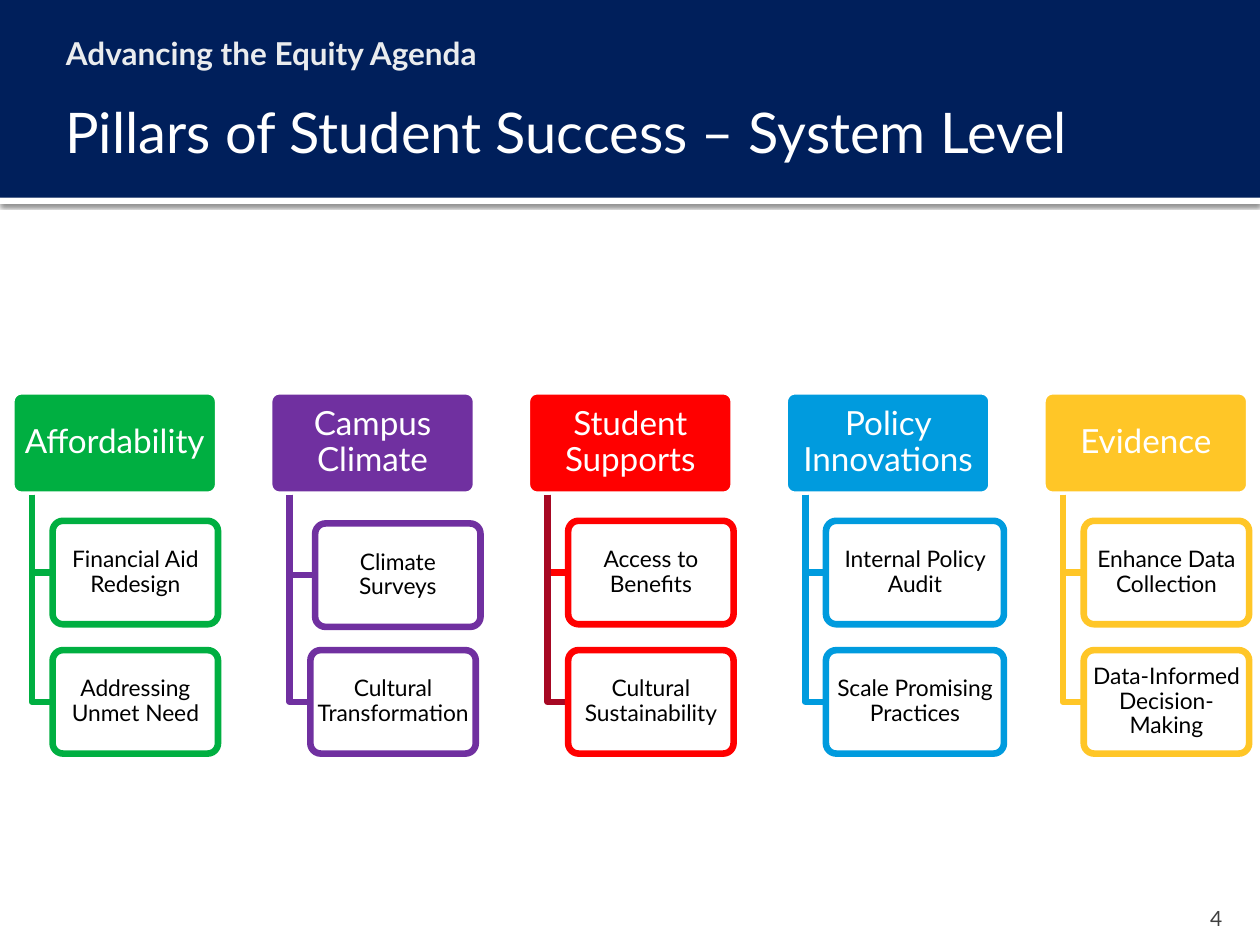
from lxml.etree import SubElement
from pptx import Presentation
from pptx.dml.color import RGBColor
from pptx.enum.shapes import MSO_SHAPE
from pptx.enum.text import MSO_ANCHOR, MSO_AUTO_SIZE, PP_ALIGN
from pptx.oxml.ns import qn
from pptx.util import Pt

SLIDE_WIDTH, SLIDE_HEIGHT = 720, 540
BAND_HEIGHT = 113

FIRST_LEFT, PILLAR_STEP = 6.5, 147.3
HEADER_TOP, HEADER_WIDTH, BOX_HEIGHT = 223.6, 118.2, 59.1
SPINE_OFFSET, ITEM_OFFSET = 11.8, 23.6
ITEM_TOP, ITEM_STEP = 297.6, 73.9
ITEM_WIDTH, WIDE_ITEM_WIDTH = 94.5, 101.7

# heading, colour, last branch colour, item width, shift of the first item, items
PILLARS = [
    ("Affordability", "00AF41", "00AF41", ITEM_WIDTH, (0, 0),
     ["Financial Aid Redesign", "Addressing Unmet Need"]),
    ("Campus Climate", "7030A0", "7030A0", ITEM_WIDTH, (2.7, 1.5),
     ["Climate Surveys", "Cultural Transformation"]),
    ("Student Supports", "FF0000", "A60823", ITEM_WIDTH, (0, 0),
     ["Access to Benefits", "Cultural Sustainability"]),
    ("Policy Innovations", "009BDE", "009BDE", WIDE_ITEM_WIDTH, (0, 0),
     ["Internal Policy Audit", "Scale Promising Practices"]),
    ("Evidence", "FFC627", "FFC627", ITEM_WIDTH, (0, 0),
     ["Enhance Data Collection", "Data-Informed Decision-Making"]),
]


def rgb(hex_string):
    return RGBColor.from_string(hex_string)


class PillarSlide:
    font_name = "Lato"
    line_width = 3.78

    def __init__(self, slide):
        self.slide = slide
        self.shapes = slide.shapes

    def set_text(self, frame, text, size, color, margins, align=PP_ALIGN.LEFT,
                 anchor=MSO_ANCHOR.MIDDLE, bold=False):
        """Fill a text frame; margins are left, top, right, bottom."""
        frame.word_wrap = True
        frame.auto_size = MSO_AUTO_SIZE.NONE
        frame.vertical_anchor = anchor
        (frame.margin_left, frame.margin_top,
         frame.margin_right, frame.margin_bottom) = map(Pt, margins)
        frame.text = text
        paragraph = frame.paragraphs[0]
        paragraph.alignment = align
        paragraph.space_before = Pt(0)
        font = paragraph.font
        font.name, font.size, font.bold = self.font_name, Pt(size), bold
        font.color.rgb = rgb(color)
        return paragraph

    def band(self, top, height, color):
        band = self.shapes.add_shape(MSO_SHAPE.RECTANGLE, 0, Pt(top), Pt(SLIDE_WIDTH), Pt(height))
        band.shadow.inherit = False
        band.fill.solid()
        band.fill.fore_color.rgb = rgb(color)
        band.line.fill.background()
        return band

    def shadowed_band(self, top, height, color):
        effects = self.band(top, height, color).element.spPr.find(qn("a:effectLst"))
        shadow = SubElement(effects, qn("a:outerShdw"), blurRad=str(Pt(2.5)),
                            dist=str(Pt(0.8)), dir="5400000", rotWithShape="0")
        black = SubElement(shadow, qn("a:srgbClr"), val="000000")
        SubElement(black, qn("a:alpha"), val="60000")

    def box(self, left, top, width, text, fill, outline, size, color, margin):
        box = self.shapes.add_shape(MSO_SHAPE.ROUNDED_RECTANGLE, Pt(left), Pt(top),
                                    Pt(width), Pt(BOX_HEIGHT))
        box.adjustments[0] = 0.1
        box.shadow.inherit = False
        box.fill.solid()
        box.fill.fore_color.rgb = rgb(fill)
        box.line.color.rgb = rgb(outline)
        box.line.width = Pt(self.line_width)
        paragraph = self.set_text(box.text_frame, text, size, color, [margin] * 4,
                                  PP_ALIGN.CENTER)
        paragraph.line_spacing = 0.9

    def branch(self, left, top, right, bottom, color):
        """Draw an elbow going down, then right."""
        builder = self.shapes.build_freeform(Pt(left), Pt(top))
        builder.add_line_segments([(Pt(left), Pt(bottom)), (Pt(right), Pt(bottom))], close=False)
        elbow = builder.convert_to_shape()
        elbow.shadow.inherit = False
        elbow.fill.background()
        elbow.line.color.rgb = rgb(color)
        elbow.line.width = Pt(self.line_width)

    def pillar(self, left, heading, color, last_color, item_width, first_shift, items):
        self.box(left, HEADER_TOP, HEADER_WIDTH, heading, color, "FFFFFF", 19, "FFFFFF", 2.7)
        spine = left + SPINE_OFFSET
        shifts = [first_shift, (0, 0)]
        branch_colors = [color, last_color]
        for row, (item, (dx, dy), branch_color) in enumerate(zip(items, shifts, branch_colors)):
            item_left = left + ITEM_OFFSET + dx
            item_top = ITEM_TOP + row * ITEM_STEP + dy
            self.branch(spine, HEADER_TOP + BOX_HEIGHT, item_left,
                        item_top + BOX_HEIGHT / 2, branch_color)
            self.box(item_left, item_top, item_width, item, "FFFFFF", color, 13, "000000", 1.8)

    def placeholder(self, holder, left, top, width, height, *text, **style):
        holder.left, holder.top, holder.width, holder.height = map(Pt, (left, top, width, height))
        # Bring the text in front of the bands
        holder.element.getparent().append(holder.element)
        return self.set_text(holder.text_frame, *text, **style)

    def kicker(self, text):
        paragraph = self.placeholder(self.slide.placeholders[1], 24, 12, 672, 36,
                                     text, 18, "EAECEE", (13.7, 7.2, 7.2, 3.6),
                                     anchor=MSO_ANCHOR.TOP, bold=True)
        properties = paragraph._p.get_or_add_pPr()
        properties.set("marL", "0")
        properties.set("indent", "0")
        properties.insert_element_before(properties.makeelement(qn("a:buNone")),
                                         "a:tabLst", "a:defRPr", "a:extLst")

    def title(self, text):
        self.placeholder(self.shapes.title, 30, 42, 660, 66,
                         text, 32, "FFFFFF", (7.2, 3.6, 3.6, 3.6))

    def page_number(self, number):
        label = self.shapes.add_textbox(Pt(648), Pt(510), Pt(57.6), Pt(21.6))
        self.set_text(label.text_frame, number, 12, "3F3F3F", (7.2, 3.6, 7.2, 0),
                      PP_ALIGN.RIGHT, MSO_ANCHOR.BOTTOM)


def main():
    presentation = Presentation()
    presentation.slide_width, presentation.slide_height = Pt(SLIDE_WIDTH), Pt(SLIDE_HEIGHT)
    page = PillarSlide(presentation.slides.add_slide(presentation.slide_layouts[1]))

    page.shadowed_band(BAND_HEIGHT, 3.6, "FFFFFF")
    page.band(0, BAND_HEIGHT, "001F5B")
    page.page_number("4")
    for column, pillar in enumerate(PILLARS):
        page.pillar(FIRST_LEFT + column * PILLAR_STEP, *pillar)
    page.kicker("Advancing the Equity Agenda")
    page.title("Pillars of Student Success – System Level")

    presentation.save("out.pptx")


if __name__ == "__main__":
    main()
